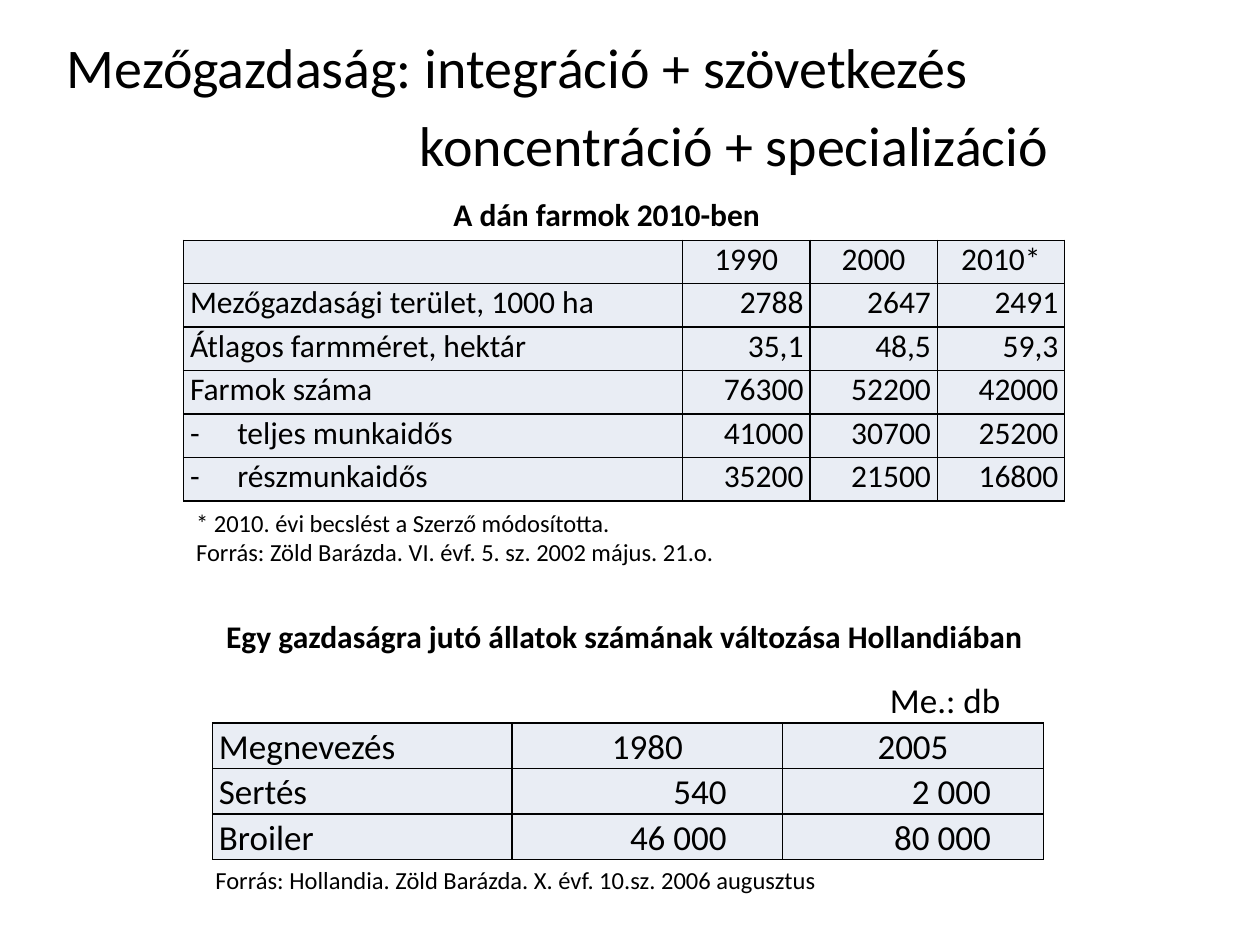
from lxml.etree import SubElement
from pptx import Presentation
from pptx.dml.color import RGBColor
from pptx.enum.text import MSO_ANCHOR as Anchor, MSO_AUTO_SIZE as AutoSize, PP_ALIGN as Align
from pptx.oxml.ns import qn
from pptx.util import Pt

FONT = "Calibri"
INK = "000000"
CELL_FILL = "E9EDF4"

FARMS = [
    ["", "1990", "2000", "2010*"],
    ["Mezőgazdasági terület, 1000 ha", "2788", "2647", "2491"],
    ["Átlagos farmméret, hektár", "35,1", "48,5", "59,3"],
    ["Farmok száma", "76300", "52200", "42000"],
    ["teljes munkaidős", "41000", "30700", "25200"],
    ["részmunkaidős", "35200", "21500", "16800"],
]
ANIMALS = [
    ["", "", "Me.: db"],
    ["Megnevezés", "1980", "2005"],
    ["Sertés", "540", "2 000"],
    ["Broiler", "46 000", "80 000"],
]


def colour(value):
    return RGBColor.from_string(value)


def apply(target, formats):
    for name, value in formats.items():
        setattr(target, name, value)


def write(para, text, size, bold=False, **formats):
    span = para.add_run()
    span.text = text
    apply(span.font, {"name": FONT, "size": Pt(size), "bold": bold})
    span.font.color.rgb = colour(INK)
    apply(para, formats)


def indent(para, left, first=0, bullet=None):
    props = para._p.get_or_add_pPr()
    props.set("marL", str(Pt(left)))
    props.set("indent", str(Pt(first)))
    if bullet:
        SubElement(props, qn("a:buFont")).set("typeface", FONT)
        SubElement(props, qn("a:buChar")).set("char", bullet)


def fill_frame(frame, lines, size, bold=False, **formats):
    for number, line in enumerate(lines):
        para = frame.add_paragraph() if number else frame.paragraphs[0]
        write(para, line, size, bold, **formats)


def add_title(page, lines):
    title = page.shapes.title
    apply(title, {"left": Pt(31), "top": Pt(15), "width": Pt(648), "height": Pt(91)})
    frame = title.text_frame
    apply(frame, {"vertical_anchor": Anchor.TOP, "auto_size": AutoSize.NONE, "word_wrap": True})
    fill_frame(frame, lines, 32, alignment=Align.LEFT)
    second = frame.paragraphs[1]
    second.space_before = Pt(6)
    indent(second, 201.6)


def add_text(page, bounds, lines, size, bold=False, wrap=True, **formats):
    box = page.shapes.add_textbox(*map(Pt, bounds))
    apply(box.text_frame, {"word_wrap": wrap, "auto_size": AutoSize.SHAPE_TO_FIT_TEXT})
    fill_frame(box.text_frame, lines, size, bold, **formats)


def set_borders(cell, visible):
    props = cell._tc.get_or_add_tcPr()
    for side in "LRTB":
        line = SubElement(props, qn("a:ln" + side), w=str(Pt(1)))
        if side in visible:
            solid = SubElement(line, qn("a:solidFill"))
            SubElement(solid, qn("a:srgbClr")).set("val", INK)
        else:
            SubElement(line, qn("a:noFill"))


def add_grid(page, left, top, widths, row_height, rows, size, anchor, header=0):
    frame = page.shapes.add_table(
        len(rows), len(widths), Pt(left), Pt(top), Pt(sum(widths)), Pt(row_height * len(rows))
    )
    table = frame.table
    apply(table, {"first_row": False, "horz_banding": False})
    for column, width in zip(table.columns, widths):
        column.width = Pt(width)
    for row_number, values in enumerate(rows):
        table.rows[row_number].height = Pt(row_height)
        for column_number, value in enumerate(values):
            cell = table.cell(row_number, column_number)
            apply(cell, {"margin_left": Pt(3.6), "margin_right": Pt(3.6), "margin_top": 0,
                         "margin_bottom": 0, "vertical_anchor": anchor})
            above_header = row_number < header
            set_borders(cell, "B" if above_header else "LRTB")
            if above_header:
                cell.fill.background()
            else:
                cell.fill.solid()
                cell.fill.fore_color.rgb = colour(CELL_FILL)
            if value:
                align = Align.RIGHT if row_number > header else Align.CENTER
                write(cell.text_frame.paragraphs[0], value, size,
                      alignment=align if column_number else Align.LEFT)
    return table


def add_farms(page):
    table = add_grid(page, 105, 137.3, [285, 72.8, 72.8, 72.8], 24.85, FARMS, 18, Anchor.TOP)
    for row_number in (4, 5):
        indent(table.cell(row_number, 0).text_frame.paragraphs[0], 27, -27, "-")


def add_animals(page):
    table = add_grid(page, 121.5, 387.2, [171.2, 154.6, 149], 26, ANIMALS, 20, Anchor.BOTTOM, header=1)
    indent(table.cell(0, 2).text_frame.paragraphs[0], 36.7)
    for row_number in (2, 3):
        for column_number, margin in ((1, 32), (2, 30)):
            table.cell(row_number, column_number).margin_right = Pt(margin)


def main():
    deck = Presentation()
    apply(deck, {"slide_width": Pt(720), "slide_height": Pt(540)})
    page = deck.slides.add_slide(deck.slide_layouts[5])
    add_title(page, ["Mezőgazdaság: integráció + szövetkezés", "koncentráció + specializáció"])
    add_text(page, (252, 108, 191.5, 29), ["A dán farmok 2010-ben"], 18, bold=True, wrap=False)
    add_farms(page)
    add_text(page, (105, 286.5, 503.3, 41), [
        "* 2010. évi becslést a Szerző módosította.",
        "Forrás: Zöld Barázda. VI. évf. 5. sz. 2002 május. 21.o.",
    ], 14)
    add_text(page, (80, 349.2, 553.7, 29),
             ["Egy gazdaságra jutó állatok számának változása Hollandiában"],
             18, bold=True, alignment=Align.CENTER)
    add_animals(page)
    add_text(page, (116, 491, 531.4, 24.5),
             ["Forrás: Hollandia. Zöld Barázda. X. évf. 10.sz. 2006 augusztus"], 14)
    deck.save("out.pptx")


if __name__ == "__main__":
    main()
